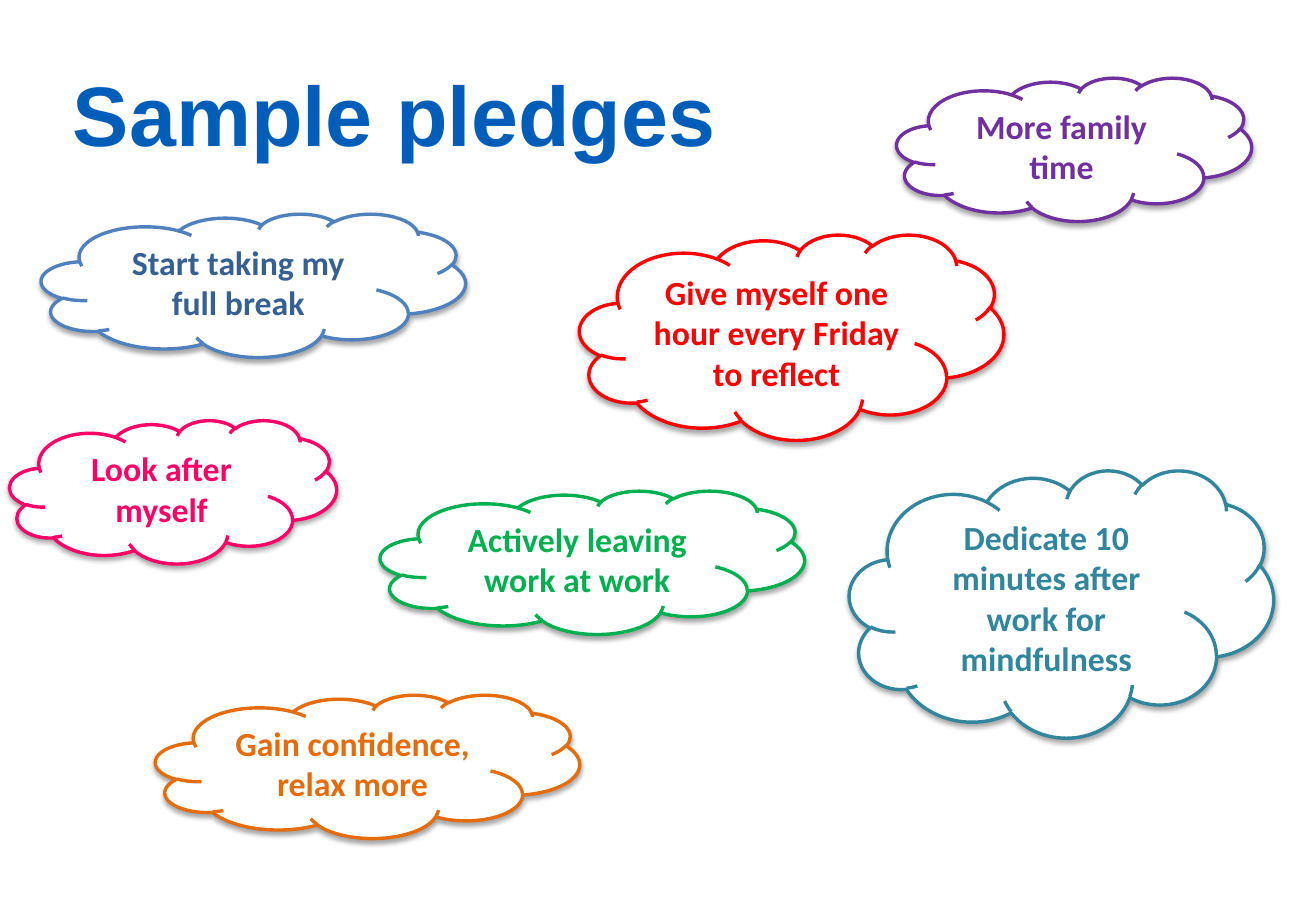
from dataclasses import dataclass

import lxml.etree
import pptx
import pptx.dml.color
import pptx.enum.shapes
import pptx.enum.text
import pptx.oxml.ns
import pptx.shapes.autoshape
import pptx.slide
import pptx.util

EMU_PER_PX = 9144  # 100 px to the inch
PAGE_WIDTH, PAGE_HEIGHT = 1083, 750

COLOURS = {
    "title": "005EB8",
    "white": "FFFFFF",
    "shadow": "000000",
    "blue": "4F81BD",
    "navy": "376092",
    "teal": "31859C",
    "orange": "E46C0A",
    "green": "00B050",
    "red": "FF0000",
    "purple": "7030A0",
    "pink": "FF0066",
}


@dataclass
class Pledge:
    text: str
    left: int
    top: int
    line: str
    width: int = 349
    height: int = 118
    text_colour: str = ""


PLEDGES = [
    Pledge("Start taking my full break", 34, 176, "blue", text_colour="navy"),
    Pledge("Dedicate 10 minutes after work for mindfulness", 699, 387, "teal", height=220),
    Pledge("Gain confidence, relax more", 128, 572, "orange"),
    Pledge("Actively leaving work at work", 313, 404, "green"),
    Pledge("Give myself one hour every Friday to reflect", 477, 193, "red", height=169),
    Pledge("More family time", 738, 64, "purple", width=292),
    Pledge("Look after myself", 8, 346, "pink", width=269),
]


def px(length: int) -> pptx.util.Emu:
    return pptx.util.Emu(length * EMU_PER_PX)


def colour(name: str) -> pptx.dml.color.RGBColor:
    return pptx.dml.color.RGBColor.from_string(COLOURS[name])


def write_text(box: pptx.shapes.autoshape.Shape, text: str, font_name: str,
               size: int, colour_name: str, inset: int) -> None:
    """Put one bold, vertically centred paragraph in the box."""
    frame = box.text_frame
    frame.word_wrap = True
    frame.vertical_anchor = pptx.enum.text.MSO_ANCHOR.MIDDLE
    frame.margin_left = frame.margin_right = px(inset)
    frame.margin_top = frame.margin_bottom = px(inset)
    para = frame.paragraphs[0]
    para.text = text
    para.font.name = font_name
    para.font.size = pptx.util.Pt(size)
    para.font.bold = True
    para.font.color.rgb = colour(colour_name)


def add_soft_shadow(shape: pptx.shapes.autoshape.Shape) -> None:
    qn = pptx.oxml.ns.qn
    shape.shadow.inherit = False
    effects = shape.element.spPr.find(qn("a:effectLst"))
    shadow = lxml.etree.SubElement(
        effects, qn("a:outerShdw"),
        blurRad=str(pptx.util.Pt(3)), dist=str(pptx.util.Pt(1.8)),
        dir="5400000", rotWithShape="0")
    tint = lxml.etree.SubElement(shadow, qn("a:srgbClr"), val=COLOURS["shadow"])
    lxml.etree.SubElement(tint, qn("a:alpha"), val="35000")


def add_title(page: pptx.slide.Slide, text: str) -> None:
    box = page.shapes.add_textbox(px(54), px(30), px(975), px(125))
    write_text(box, text, "Arial", 50, "title", inset=6)


def add_cloud(page: pptx.slide.Slide, pledge: Pledge) -> None:
    cloud = page.shapes.add_shape(
        pptx.enum.shapes.MSO_SHAPE.CLOUD,
        px(pledge.left), px(pledge.top), px(pledge.width), px(pledge.height))
    cloud.fill.solid()
    cloud.fill.fore_color.rgb = colour("white")
    cloud.line.color.rgb = colour(pledge.line)
    cloud.line.width = pptx.util.Pt(2)
    add_soft_shadow(cloud)
    write_text(cloud, pledge.text, "Calibri", 20,
               pledge.text_colour or pledge.line, inset=5)
    cloud.text_frame.auto_size = pptx.enum.text.MSO_AUTO_SIZE.SHAPE_TO_FIT_TEXT
    cloud.text_frame.paragraphs[0].alignment = pptx.enum.text.PP_ALIGN.CENTER


def main() -> None:
    deck = pptx.Presentation()
    deck.slide_width, deck.slide_height = px(PAGE_WIDTH), px(PAGE_HEIGHT)
    page = deck.slides.add_slide(deck.slide_layouts[6])
    add_title(page, "Sample pledges")
    for pledge in PLEDGES:
        add_cloud(page, pledge)
    deck.save("out.pptx")


if __name__ == "__main__":
    main()
